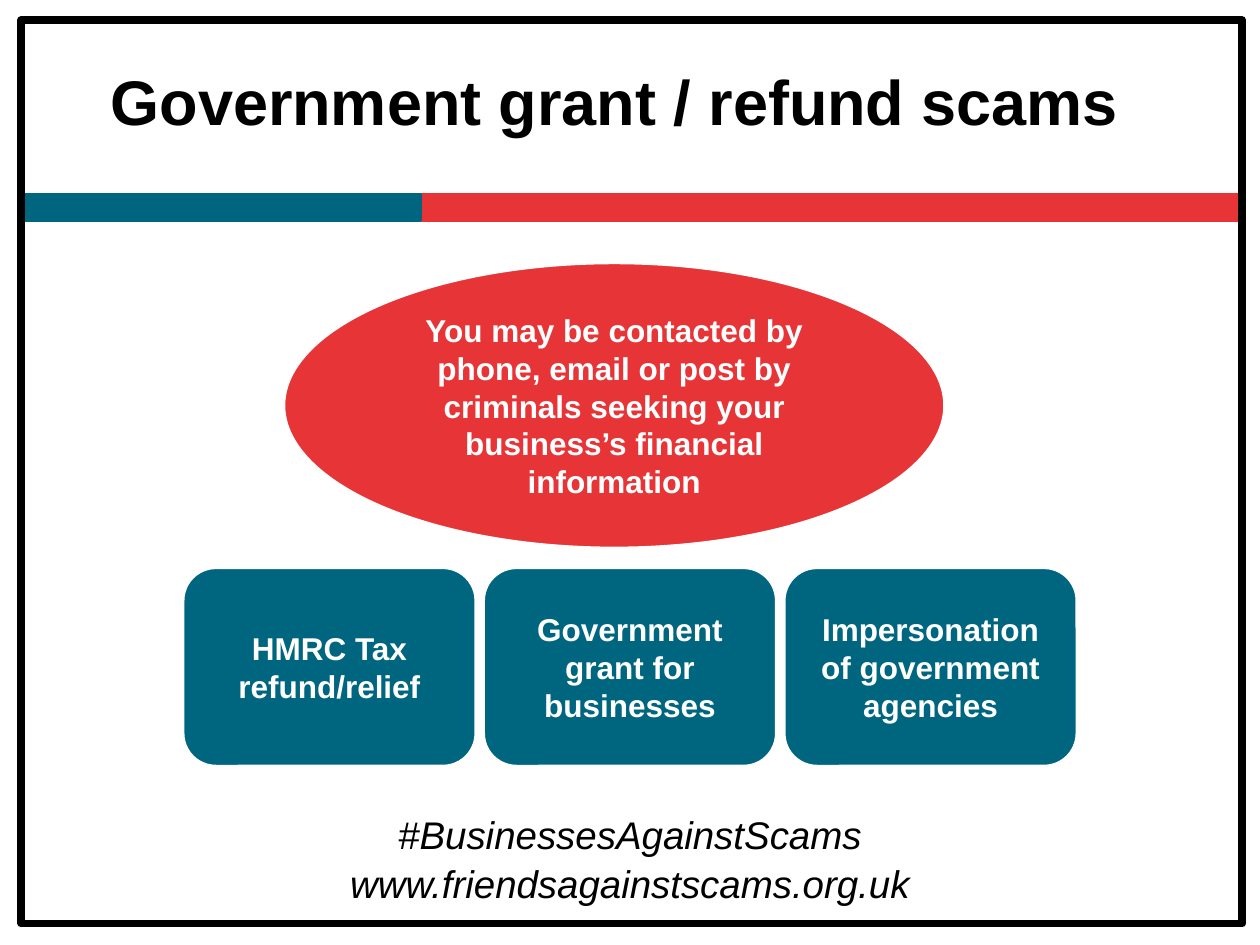
import pptx
import pptx.util
import pptx.dml.color
import pptx.enum.shapes
import pptx.enum.text
from dataclasses import dataclass

Pt = pptx.util.Pt
Shapes = pptx.enum.shapes.MSO_SHAPE


@dataclass(frozen=True)
class Theme:
    font: str = "Arial"
    black: str = "000000"
    white: str = "FFFFFF"
    red: str = "E73437"
    teal: str = "006680"
    title_size: float = 36
    body_size: float = 18
    footer_size: float = 22
    thin_line: float = 2
    frame_line: float = 4.5


THEME = Theme()


def rgb(color):
    return pptx.dml.color.RGBColor.from_string(color)


def write_text(shape, text, size, color, bold=False, italic=False,
               anchor=pptx.enum.text.MSO_ANCHOR.MIDDLE):
    frame = shape.text_frame
    frame.word_wrap = True
    frame.auto_size = pptx.enum.text.MSO_AUTO_SIZE.NONE
    frame.vertical_anchor = anchor
    paragraph = frame.paragraphs[0]
    paragraph.alignment = pptx.enum.text.PP_ALIGN.CENTER
    run = paragraph.add_run()
    run.text = text
    run.font.name = THEME.font
    run.font.size = Pt(size)
    run.font.bold = bold
    run.font.italic = italic
    run.font.color.rgb = rgb(color)


def draw_shape(slide, kind, box, fill, line, line_width=THEME.thin_line):
    shape = slide.shapes.add_shape(kind, *map(Pt, box))
    shape.shadow.inherit = False
    if fill:
        shape.fill.solid()
        shape.fill.fore_color.rgb = rgb(fill)
    else:
        shape.fill.background()
    shape.line.color.rgb = rgb(line)
    shape.line.width = Pt(line_width)
    return shape


def add_frame(slide, box):
    left, top, width, height = box
    bar_top, bar_height = top + 100, 14.4
    red_offset, teal_width = 18, 228.24
    draw_shape(slide, Shapes.RECTANGLE,
               (left + red_offset, bar_top, width - red_offset, bar_height),
               THEME.red, THEME.red)
    draw_shape(slide, Shapes.RECTANGLE,
               (left, bar_top, teal_width, bar_height), THEME.teal, THEME.teal)
    draw_shape(slide, Shapes.RECTANGLE, box, None, THEME.black,
               THEME.frame_line)


def add_title(slide, box, text):
    title = slide.shapes.title
    title.left, title.top, title.width, title.height = map(Pt, box)
    write_text(title, text, THEME.title_size, THEME.black, bold=True)


def add_message(slide, box, text):
    ellipse = draw_shape(slide, Shapes.OVAL, box, THEME.red, THEME.white)
    write_text(ellipse, text, THEME.body_size, THEME.white, bold=True)


def add_cards(slide, box, labels, gap=4):
    left, top, width, height = box
    card_width = (width - gap * (len(labels) - 1)) / len(labels)
    for index, label in enumerate(labels):
        card_left = left + index * (card_width + gap)
        card = draw_shape(slide, Shapes.ROUNDED_RECTANGLE,
                          (card_left, top, card_width, height),
                          THEME.teal, THEME.white)
        write_text(card, label, THEME.body_size, THEME.white, bold=True)


def add_footer(slide, box, lines):
    left, top, width, height = box
    pitch = height / len(lines)
    for index, line in enumerate(lines):
        text_box = slide.shapes.add_textbox(
            Pt(left), Pt(top + index * pitch), Pt(width), Pt(34))
        write_text(text_box, line, THEME.footer_size, THEME.black, italic=True,
                   anchor=pptx.enum.text.MSO_ANCHOR.TOP)


def main():
    presentation = pptx.Presentation()
    presentation.slide_width = Pt(720)
    presentation.slide_height = Pt(540)
    slide = presentation.slides.add_slide(presentation.slide_layouts[5])

    add_frame(slide, (12.2, 11.6, 697.7, 516.2))
    add_title(slide, (12.2, 12.2, 678.2, 90), "Government grant / refund scams")
    add_message(slide, (162, 150, 378, 163.4),
                "You may be contacted by phone, email or post by criminals "
                "seeking your business’s financial information")
    add_cards(slide, (104.4, 324.2, 511.2, 113.8),
              ["HMRC Tax refund/relief",
               "Government grant for businesses",
               "Impersonation of government agencies"])
    add_footer(slide, (0, 460, 720, 56.2),
               ["#BusinessesAgainstScams", "www.friendsagainstscams.org.uk"])

    presentation.save("out.pptx")


if __name__ == "__main__":
    main()
